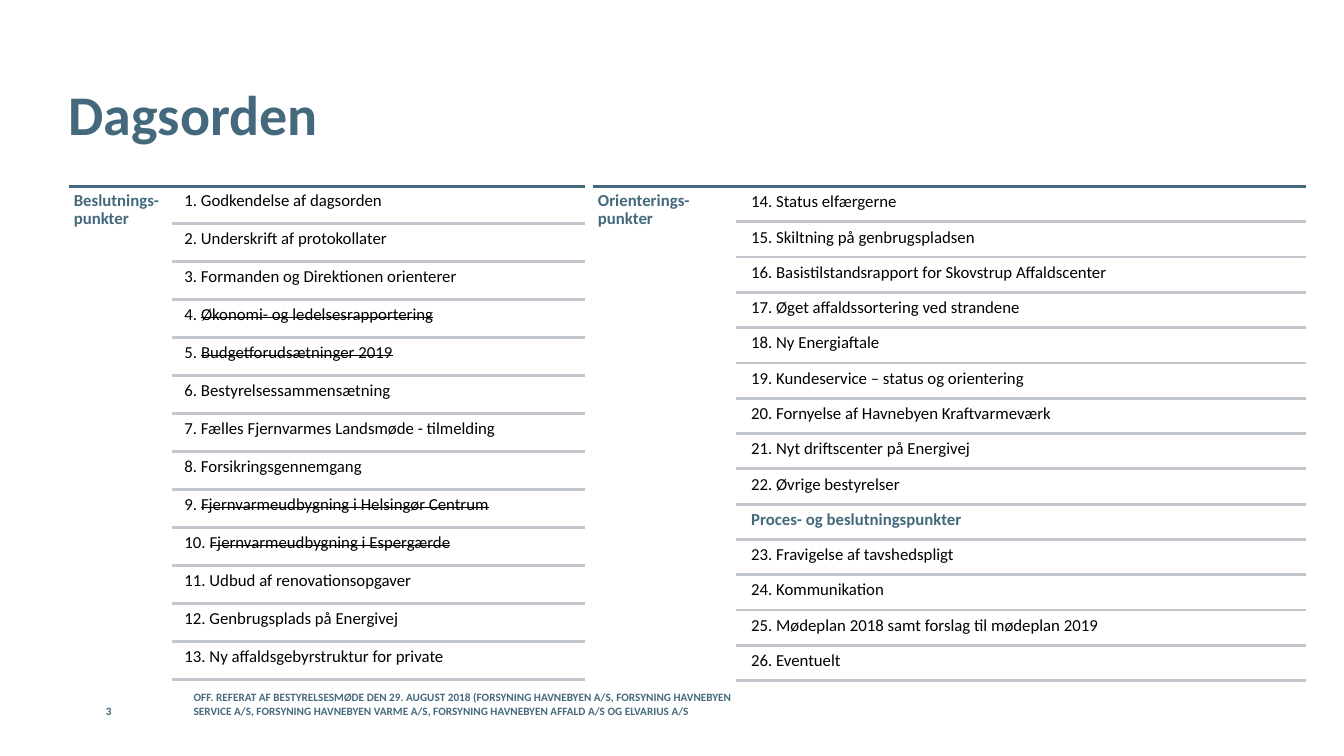
from lxml import etree
from pptx import Presentation
from pptx import util as u
from pptx.dml import color
from pptx.enum import shapes, text
from pptx.oxml import ns

COLORS = {"accent": "44697D", "rule": "C1C7CC", "ink": "000000"}
FONT = "Calibri"

# Agenda items: number, wording, optional "struck" or "heading"
DECISIONS = [
    ("1. ", "Godkendelse af dagsorden"),
    ("2. ", "Underskrift af protokollater"),
    ("3. ", "Formanden og Direktionen orienterer"),
    ("4. ", "Økonomi- og ledelsesrapportering", "struck"),
    ("5. ", "Budgetforudsætninger 2019", "struck"),
    ("6. ", "Bestyrelsessammensætning"),
    ("7. ", "Fælles Fjernvarmes Landsmøde - tilmelding"),
    ("8. ", "Forsikringsgennemgang"),
    ("9. ", "Fjernvarmeudbygning i Helsingør Centrum", "struck"),
    ("10. ", "Fjernvarmeudbygning i Espergærde", "struck"),
    ("11. ", "Udbud af renovationsopgaver"),
    ("12. ", "Genbrugsplads på Energivej"),
    ("13. ", "Ny affaldsgebyrstruktur for private"),
]
BRIEFINGS = [
    ("14. ", "Status elfærgerne"),
    ("15. ", "Skiltning på genbrugspladsen"),
    ("16. ", "Basistilstandsrapport for Skovstrup Affaldscenter"),
    ("17. ", "Øget affaldssortering ved strandene"),
    ("18. ", "Ny Energiaftale"),
    ("19. ", "Kundeservice – status og orientering"),
    ("20. ", "Fornyelse af Havnebyen Kraftvarmeværk"),
    ("21. ", "Nyt driftscenter på Energivej"),
    ("22. ", "Øvrige bestyrelser"),
    ("", "Proces- og beslutningspunkter", "heading"),
    ("23. ", "Fravigelse af tavshedspligt"),
    ("24. ", "Kommunikation"),
    ("25. ", "Mødeplan 2018 samt forslag til mødeplan 2019"),
    ("26. ", "Eventuelt"),
]
FOOTER = ("OFF. REFERAT AF BESTYRELSESMØDE DEN 29. AUGUST 2018 "
          "(FORSYNING HAVNEBYEN A/S, FORSYNING HAVNEBYEN SERVICE A/S, "
          "FORSYNING HAVNEBYEN VARME A/S, FORSYNING HAVNEBYEN AFFALD A/S "
          "OG ELVARIUS A/S")


def rgb(name):
    return color.RGBColor.from_string(COLORS[name])


def format_frame(tf, anchor, inset=0):
    tf.word_wrap = True
    tf.auto_size = text.MSO_AUTO_SIZE.NONE
    tf.vertical_anchor = anchor
    tf.margin_left = tf.margin_right = u.Cm(inset)
    tf.margin_top = tf.margin_bottom = u.Cm(inset)


def format_font(p, size, ink="accent", bold=True):
    p.font.name = FONT
    p.font.size = u.Pt(size)
    p.font.bold = bold
    p.font.color.rgb = rgb(ink)


def add_title(s, words):
    title = s.shapes.title
    title.left, title.top = u.Cm(1.73), u.Cm(1.02)
    title.width, title.height = u.Cm(29.21), u.Cm(3.68)
    format_frame(title.text_frame, text.MSO_ANCHOR.MIDDLE)
    p = title.text_frame.paragraphs[0]
    p.text = words
    p.alignment = text.PP_ALIGN.LEFT
    format_font(p, 40)


def add_text(parent, x, y, w, h, anchor=text.MSO_ANCHOR.TOP, inset=0):
    sp = parent.shapes.add_textbox(u.Cm(x), u.Cm(y), u.Cm(w), u.Cm(h))
    format_frame(sp.text_frame, anchor, inset)
    return sp.text_frame.paragraphs[0]


def add_rule(parent, x1, x2, y, ink):
    line = parent.shapes.add_connector(
        shapes.MSO_CONNECTOR.STRAIGHT, u.Cm(x1), u.Cm(y), u.Cm(x2), u.Cm(y))
    line.line.color.rgb = rgb(ink)
    line.line.width = u.Pt(2)
    etree.SubElement(line._element.spPr, ns.qn("a:effectLst"))


def add_item(group, x, y, w, h, number, words, style="plain"):
    p = add_text(group, x, y, w, h, inset=0.13)
    p.line_spacing = 0.9
    heading = style == "heading"
    format_font(p, 12, "accent" if heading else "ink", heading)
    if style == "struck":
        p.add_run().text = number
        r = p.add_run()
        r.text = words
        r._r.get_or_add_rPr().set("strike", "sngStrike")
    else:
        p.add_run().text = number + words


def add_agenda(s, heading, items, left, right, heading_w, rule_x, text_x,
               top, bottom):
    """Heading at the left, ruled rows of equal height at the right."""
    group = s.shapes.add_group_shape()
    add_rule(group, left, right, 4.7, "accent")
    add_item(group, left, 4.7, heading_w, 12.5, "", heading, "heading")
    pitch = (bottom - top) / len(items)
    for i, item in enumerate(items):
        y = top + i * pitch
        add_item(group, text_x, y + 0.04, right - text_x, pitch - 0.05, *item)
        add_rule(group, rule_x, right, y + pitch, "rule")


def add_footer(s, x, w, words):
    p = add_text(s, x, 17.6, w, 0.48, text.MSO_ANCHOR.BOTTOM)
    p.text = words
    format_font(p, 8)


def main():
    prs = Presentation()
    prs.slide_width, prs.slide_height = u.Cm(33.87), u.Cm(19.05)
    s = prs.slides.add_slide(prs.slide_layouts[5])
    add_title(s, "Dagsorden")

    # Two agenda columns
    add_agenda(s, "Beslutnings-punkter", DECISIONS, left=1.73, right=14.73,
               heading_w=2.59, rule_x=4.34, text_x=4.52, top=4.68, bottom=17.12)
    add_agenda(s, "Orienterings-punkter", BRIEFINGS, left=14.94, right=32.92,
               heading_w=3.61, rule_x=18.54, text_x=18.8, top=4.7, bottom=17.15)

    # Footer and page number
    add_footer(s, 4.88, 14.4, FOOTER)
    add_footer(s, 2.67, 1.73, "3")
    prs.save("out.pptx")


if __name__ == "__main__":
    main()
